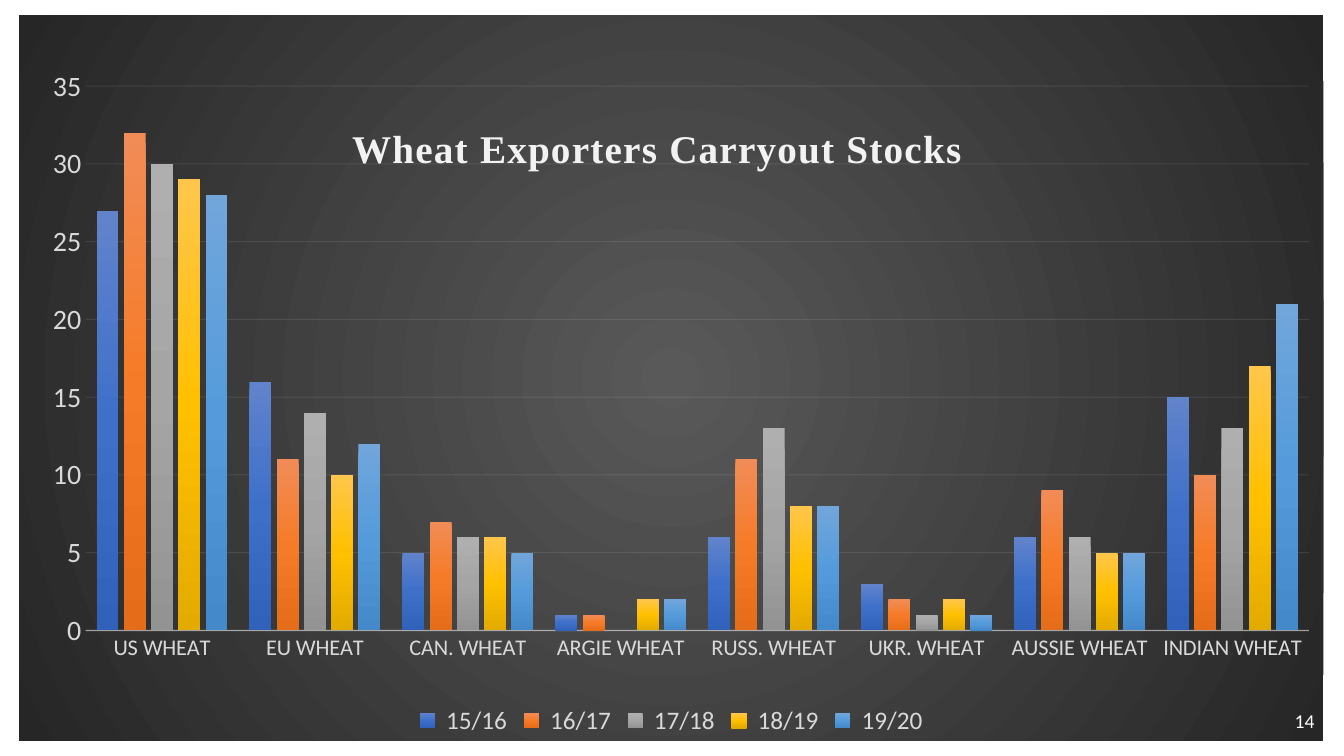
from dataclasses import dataclass

from pptx import Presentation
from pptx import util as u
from pptx.chart.data import CategoryChartData
from pptx.dml.color import RGBColor
from pptx.enum import chart as ch, text
from pptx.oxml import parse_xml
from pptx.oxml.ns import nsdecls, qn


@dataclass(frozen=True)
class Theme:
    body_font: str = "Calibri"
    title_font: str = "Times New Roman"
    light: str = "F2F2F2"
    label: str = "D9D9D9"
    white: str = "FFFFFF"
    backdrop: tuple = ("595959", "262626")
    seasons: tuple = (
        ("6183CB", "3E70CA", "3062BB"),
        ("F18C57", "F67B28", "E56C19"),
        ("AFAFAF", "A5A5A5", "939393"),
        ("FFC64B", "FFC000", "E3AB00"),
        ("71A6DB", "559BDB", "448ACA"),
    )
    title_size: int = 28
    value_size: int = 20
    legend_size: int = 18
    category_size: int = 16
    number_size: int = 14


EXPORTERS = ["US WHEAT", "EU WHEAT", "CAN. WHEAT", "ARGIE WHEAT",
             "RUSS. WHEAT", "UKR. WHEAT", "AUSSIE WHEAT", "INDIAN WHEAT"]
STOCKS = {
    " 15/16": (27, 16, 5, 1, 6, 3, 6, 15),
    " 16/17": (32, 11, 7, 1, 11, 2, 9, 10),
    " 17/18": (30, 14, 6, 0, 13, 1, 6, 13),
    " 18/19": (29, 10, 6, 2, 8, 2, 5, 17),
    " 19/20": (28, 12, 5, 2, 8, 1, 5, 21),
}


def apply(target, formats):
    for name, value in formats.items():
        setattr(target, name, value)


def gradient(colors, direction):
    """Evenly spaced colour stops followed by a direction element."""
    step = 100000 // (len(colors) - 1)
    stops = "".join(f'<a:gs pos="{i * step}"><a:srgbClr val="{c}"/></a:gs>'
                    for i, c in enumerate(colors))
    return f'<a:gradFill {nsdecls("a")}><a:gsLst>{stops}</a:gsLst>{direction}</a:gradFill>'


def place(parent, index, **fractions):
    """Give a chart part a manual layout in fractions of the chart."""
    for old in parent.findall(qn("c:layout")):
        parent.remove(old)
    inner = '<c:layoutTarget val="inner"/>' if "w" in fractions else ""
    modes = "".join(f'<c:{k}Mode val="edge"/>' for k in "xy")
    sizes = "".join(f'<c:{k} val="{v}"/>' for k, v in fractions.items())
    parent.insert(index, parse_xml(
        f'<c:layout {nsdecls("c")}><c:manualLayout>{inner}{modes}{sizes}'
        '</c:manualLayout></c:layout>'))


class StockSlide:
    def __init__(self, deck, theme):
        self.theme = theme
        self.slide = deck.slides.add_slide(deck.slide_layouts[6])

    def style_font(self, font, size, color, **extra):
        apply(font, {"name": self.theme.body_font, "size": u.Pt(size), **extra})
        font.color.rgb = RGBColor.from_string(color)

    def style_line(self, line, width, opacity):
        line.width = u.Pt(width)
        line.color.rgb = RGBColor.from_string(self.theme.light)
        tint = next(line._ln.iter(qn("a:srgbClr")))
        tint.append(parse_xml(f'<a:alpha {nsdecls("a")} val="{opacity * 1000}"/>'))

    def add_columns(self, left, top, width, height):
        data = CategoryChartData(number_format="0")
        data.categories = EXPORTERS
        for season, stocks in STOCKS.items():
            data.add_series(season, stocks)
        chart = self.slide.shapes.add_chart(
            ch.XL_CHART_TYPE.COLUMN_CLUSTERED,
            *map(u.Cm, (left, top, width, height)), data).chart
        self.style_font(chart.font, 10, "000000")

        # Backdrop and plot area
        space = chart._chartSpace
        glow = gradient(self.theme.backdrop, '<a:path path="circle"><a:fillToRect '
                        'l="50000" t="50000" r="50000" b="50000"/></a:path>')
        space.find(qn("c:chart")).addnext(parse_xml(
            f'<c:spPr {nsdecls("c", "a")}>{glow}<a:ln><a:noFill/></a:ln></c:spPr>'))
        place(next(space.iter(qn("c:plotArea"))), 0, x=0.051, y=0.098, w=0.938, h=0.75)

        # Columns
        plot = chart.plots[0]
        apply(plot, {"gap_width": 100, "overlap": -24, "vary_by_categories": False})
        for season, colors in zip(plot.series, self.theme.seasons):
            season._element.get_or_add_spPr().insert(
                0, parse_xml(gradient(colors, '<a:lin ang="5400000" scaled="0"/>')))
        return chart

    def add_axes(self, chart):
        no_ticks = {"major_tick_mark": ch.XL_TICK_MARK.NONE,
                    "minor_tick_mark": ch.XL_TICK_MARK.NONE}
        exporters, stocks = chart.category_axis, chart.value_axis
        apply(exporters, no_ticks)
        apply(stocks, {**no_ticks, "minimum_scale": 0, "maximum_scale": 35,
                       "major_unit": 5, "has_major_gridlines": True})
        apply(stocks.tick_labels, {"number_format": "0", "number_format_is_linked": False})
        for axis, size in ((exporters, self.theme.category_size),
                           (stocks, self.theme.value_size)):
            self.style_font(axis.tick_labels.font, size, self.theme.label)
        self.style_line(exporters.format.line, 1, 54)
        self.style_line(stocks.major_gridlines.format.line, 0.75, 10)
        stocks.format.line.fill.background()

    def add_title(self, chart, words):
        chart.has_title = True
        title = chart.chart_title
        heading = title.text_frame.paragraphs[0].add_run()
        heading.text = words
        self.style_font(heading.font, self.theme.title_size, self.theme.light,
                        name=self.theme.title_font, bold=True)
        heading.font._element.set("spc", "100")
        place(title._element, 1, x=0.25, y=0.14)

    def add_legend(self, chart):
        chart.has_legend = True
        apply(chart.legend, {"position": ch.XL_LEGEND_POSITION.BOTTOM,
                             "include_in_layout": False})
        self.style_font(chart.legend.font, self.theme.legend_size, self.theme.label)

    def add_page_number(self, number, left, top, width, height):
        frame = self.slide.shapes.add_textbox(
            *map(u.Cm, (left, top, width, height))).text_frame
        apply(frame, {"word_wrap": True, "vertical_anchor": text.MSO_ANCHOR.MIDDLE})
        line = frame.paragraphs[0]
        line.alignment = text.PP_ALIGN.RIGHT
        digits = line.add_run()
        digits.text = number
        self.style_font(digits.font, self.theme.number_size, self.theme.white)


def main():
    deck = Presentation()
    apply(deck, {"slide_width": u.Cm(33.87), "slide_height": u.Cm(19.05)})
    page = StockSlide(deck, Theme())
    columns = page.add_columns(0.48, 0.38, 32.87, 18.29)
    page.add_axes(columns)
    page.add_title(columns, "Wheat Exporters Carryout Stocks")
    page.add_legend(columns)
    page.add_page_number("14", 25.76, 17.65, 7.62, 1.02)
    deck.save("out.pptx")


if __name__ == "__main__":
    main()
